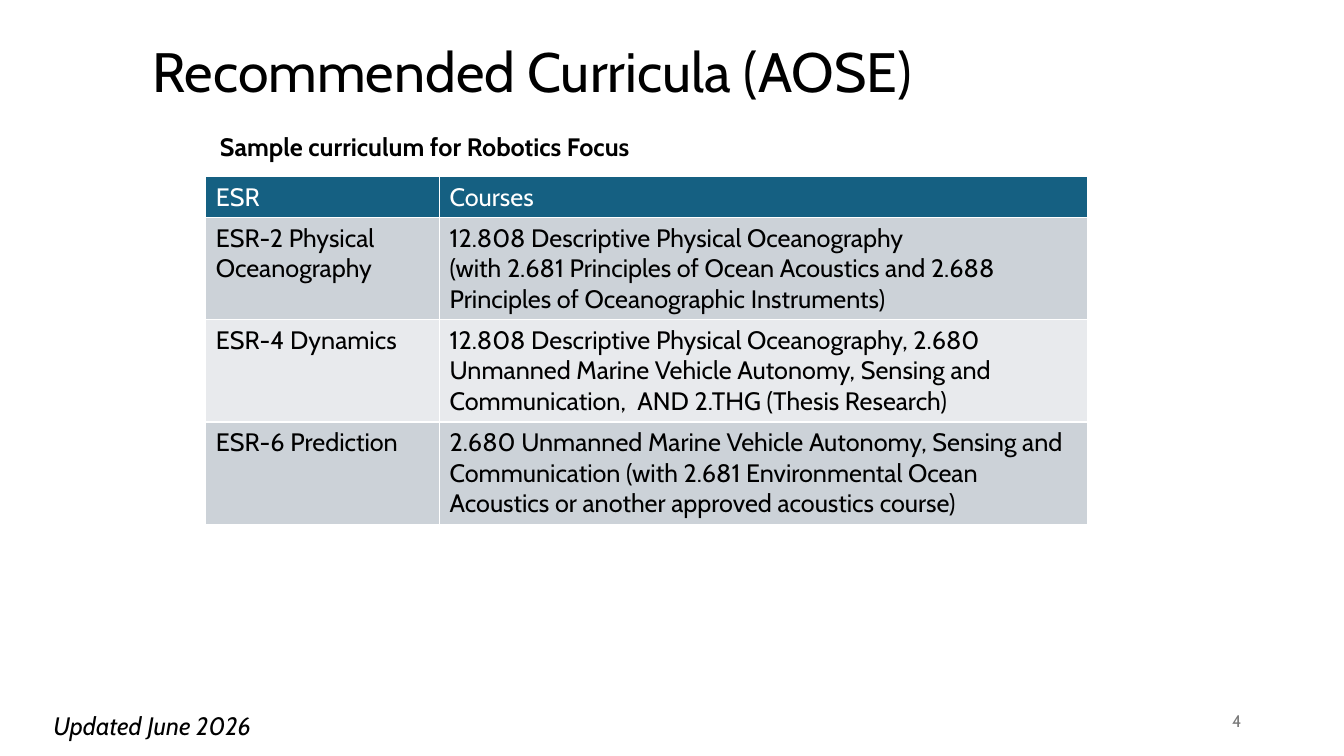
from pptx import Presentation
from pptx.dml.color import RGBColor
from pptx.enum import text as t
from pptx.util import Pt

BLACK = RGBColor(0, 0, 0)
WHITE = RGBColor(255, 255, 255)
GRAY = RGBColor(0x79, 0x79, 0x79)
TEAL = RGBColor(0x15, 0x60, 0x82)
DARK = RGBColor(0xCC, 0xD2, 0xD8)
LIGHT = RGBColor(0xE8, 0xEA, 0xED)


def style(para, size, color, **more):
    look = {"name": "Cabin", "size": Pt(size), **more}
    for key, value in look.items():
        setattr(para.font, key, value)
    para.font.color.rgb = color


deck = Presentation()
deck.slide_width, deck.slide_height = Pt(960), Pt(540)
slide = deck.slides.add_slide(deck.slide_layouts[6])

MID, TOP = t.MSO_ANCHOR.MIDDLE, t.MSO_ANCHOR.TOP
LEFT, RIGHT = t.PP_ALIGN.LEFT, t.PP_ALIGN.RIGHT
labels = [
    ("Recommended Curricula (AOSE)", (102, 29.5, 720, 48), MID, LEFT, 0.9, True,
     39.6, BLACK, {}),
    ("4", (678, 500.5, 216, 28.75), MID, RIGHT, 1, True, 12, GRAY, {}),
    ("Sample curriculum for Robotics Focus", (150, 90, 330.5, 29), TOP, LEFT, 1, False,
     18, BLACK, {"bold": True}),
    ("Updated June 2026", (31, 503.5, 164, 29), TOP, LEFT, 1, False,
     18, BLACK, {"italic": True}),
]
for words, place, anchor, align, space, wrap, size, color, more in labels:
    frame = slide.shapes.add_textbox(*map(Pt, place)).text_frame
    frame.word_wrap = wrap
    frame.vertical_anchor = anchor
    frame.text = words
    para = frame.paragraphs[0]
    para.alignment = align
    para.line_spacing = space
    style(para, size, color, **more)

courses = [
    ("ESR", "Courses"),
    ("ESR-2 Physical Oceanography",
     "12.808 Descriptive Physical Oceanography\n"
     "(with 2.681 Principles of Ocean Acoustics and 2.688 "
     "Principles of Oceanographic Instruments)"),
    ("ESR-4 Dynamics",
     "12.808 Descriptive Physical Oceanography, 2.680 Unmanned Marine Vehicle "
     "Autonomy, Sensing and Communication,  AND 2.THG (Thesis Research)"),
    ("ESR-6 Prediction",
     "2.680 Unmanned Marine Vehicle Autonomy, Sensing and Communication "
     "(with 2.681 Environmental Ocean Acoustics or another approved acoustics course)"),
]
fills = [TEAL, DARK, LIGHT, DARK]
table = slide.shapes.add_table(4, 2, Pt(147), Pt(126.25), Pt(630), Pt(248.2)).table
for col, width in zip(table.columns, (167, 463)):
    col.width = Pt(width)
for r, (row, texts, fill) in enumerate(zip(table.rows, courses, fills)):
    row.height = Pt(73 if r else 29.2)
    for cell, words in zip(row.cells, texts):
        cell.text = words
        cell.fill.solid()
        cell.fill.fore_color.rgb = fill
        for para in cell.text_frame.paragraphs:
            style(para, 18, BLACK if r else WHITE, bold=False)

deck.save("out.pptx")
